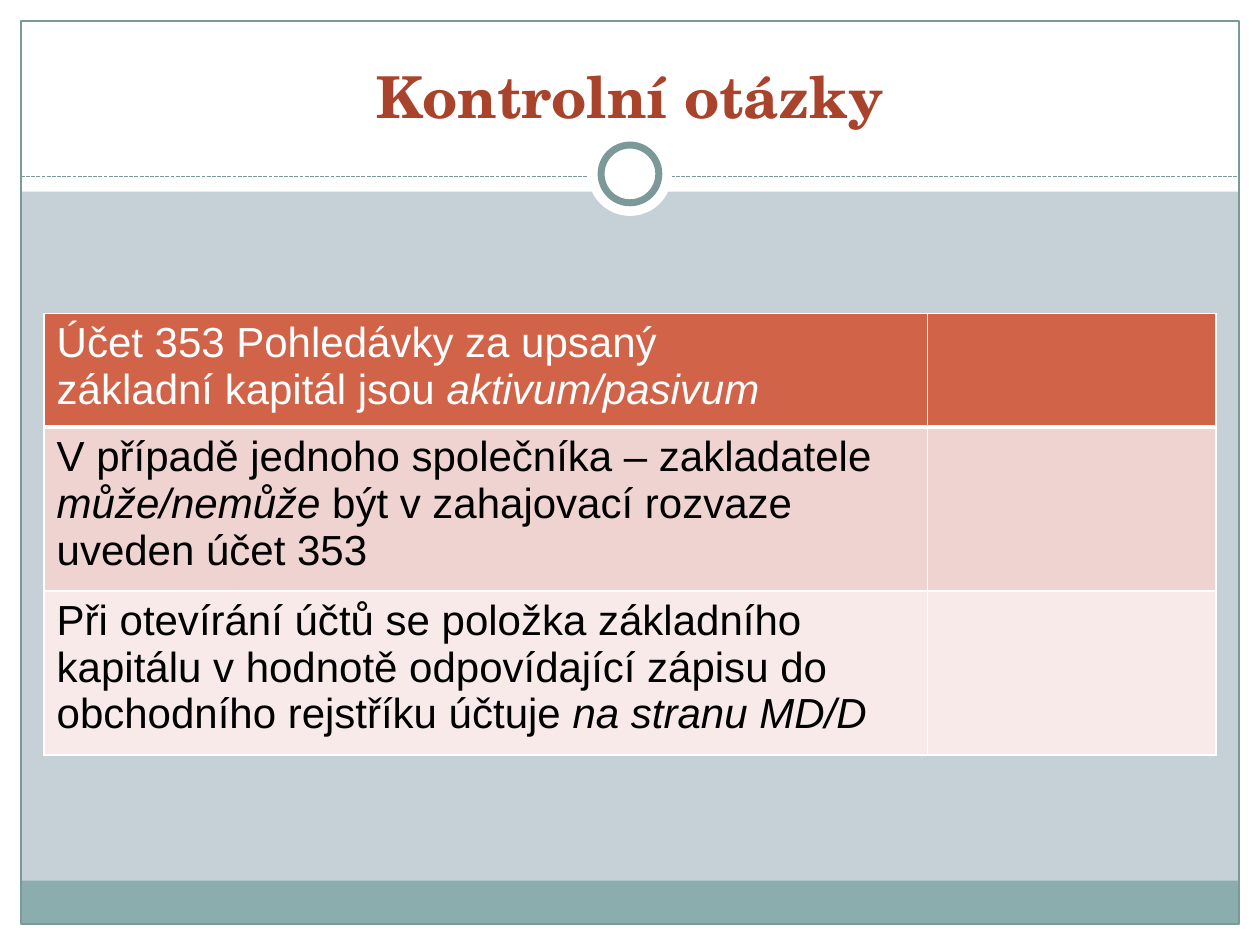
from pptx import Presentation
from pptx.dml.color import RGBColor
from pptx.enum.dml import MSO_LINE
from pptx.enum.shapes import MSO_CONNECTOR, MSO_SHAPE
from pptx.enum.text import MSO_ANCHOR, PP_ALIGN
from pptx.oxml.ns import qn
from pptx.util import Pt
from lxml.etree import SubElement

WHITE = RGBColor(0xFF, 0xFF, 0xFF)
BLACK = RGBColor(0, 0, 0)
BACKGROUND = RGBColor(0xC5, 0xD1, 0xD7)
TEAL = RGBColor(0x8C, 0xAD, 0xAE)
FRAME = RGBColor(0x7C, 0x99, 0x9A)
TITLE = RGBColor(0xA9, 0x43, 0x2B)
HEADER = RGBColor(0xD1, 0x63, 0x49)
ROW_DARK = RGBColor(0xEE, 0xD3, 0xD0)
ROW_LIGHT = RGBColor(0xF7, 0xEA, 0xE9)

WIDTH, HEIGHT, MARGIN = 720, 540, 12
RULE_TOP, RING_CENTER = 100.8, 99.4

ROWS = [
    (60.6, HEADER, WHITE, [
        [("Účet 353 Pohledávky za upsaný", False)],
        [("základní kapitál jsou ", False), ("aktivum/pasivum", True)],
    ]),
    (87.4, ROW_DARK, BLACK, [
        [("V případě jednoho společníka – zakladatele ", False),
         ("může/nemůže", True),
         (" být v zahajovací rozvaze uveden účet 353", False)],
    ]),
    (87.4, ROW_LIGHT, BLACK, [
        [("Při otevírání účtů se položka základního kapitálu v hodnotě "
          "odpovídající zápisu do obchodního rejstříku účtuje ", False),
         ("na stranu MD/D", True)],
    ]),
]


def add_text(paragraph, text, font="Arial", size=24, color=BLACK, bold=False, italic=False):
    run = paragraph.add_run()
    run.text = text
    run.font.name = font
    run.font.size = Pt(size)
    run.font.color.rgb = color
    run.font.bold = bold
    run.font.italic = italic


class SlideBuilder:
    title_font = "TeX Gyre Schola"
    body_font = "Arial"

    def __init__(self, slide):
        self.slide = slide
        slide.background.fill.solid()
        slide.background.fill.fore_color.rgb = BACKGROUND

    def shape(self, kind, left, top, width, height, fill=None, line=None, line_width=0.75):
        shape = self.slide.shapes.add_shape(kind, Pt(left), Pt(top), Pt(width), Pt(height))
        shape.shadow.inherit = False
        if fill is None:
            shape.fill.background()
        else:
            shape.fill.solid()
            shape.fill.fore_color.rgb = fill
        if line is None:
            shape.line.fill.background()
        else:
            shape.line.color.rgb = line
            shape.line.width = Pt(line_width)

    def circle(self, diameter, **style):
        self.shape(MSO_SHAPE.OVAL, (WIDTH - diameter) / 2, RING_CENTER - diameter / 2,
                   diameter, diameter, **style)

    def dashed_rule(self, left, right, top):
        connector = self.slide.shapes.add_connector(
            MSO_CONNECTOR.STRAIGHT, Pt(left), Pt(top), Pt(right), Pt(top))
        connector.line.color.rgb = FRAME
        connector.line.width = Pt(0.75)
        connector.line.dash_style = MSO_LINE.SQUARE_DOT
        SubElement(connector._element.spPr, qn("a:effectLst"))

    def title(self, text, left, top, width, height):
        text_frame = self.slide.shapes.add_textbox(
            Pt(left), Pt(top), Pt(width), Pt(height)).text_frame
        text_frame.word_wrap = True
        text_frame.vertical_anchor = MSO_ANCHOR.BOTTOM
        paragraph = text_frame.paragraphs[0]
        paragraph.alignment = PP_ALIGN.CENTER
        add_text(paragraph, text, font=self.title_font, size=33, color=TITLE, bold=True)

    def borders(self, cell, top, bottom):
        properties = cell._tc.get_or_add_tcPr()
        widths = {"a:lnL": 1, "a:lnR": 1, "a:lnT": top, "a:lnB": bottom}
        for position, (tag, width) in enumerate(widths.items()):
            border = SubElement(properties, qn(tag), w=str(Pt(width)))
            fill = SubElement(border, qn("a:solidFill"))
            SubElement(fill, qn("a:srgbClr"), val=str(WHITE))
            properties.insert(position, border)

    def table(self, left, top, column_widths, rows):
        table = self.slide.shapes.add_table(
            len(rows), len(column_widths), Pt(left), Pt(top),
            Pt(sum(column_widths)), Pt(sum(row[0] for row in rows))).table
        for column, width in zip(table.columns, column_widths):
            column.width = Pt(width)
        for index, (height, fill, color, paragraphs) in enumerate(rows):
            table.rows[index].height = Pt(height)
            for cell in table.rows[index].cells:
                cell.fill.solid()
                cell.fill.fore_color.rgb = fill
                self.borders(cell, 3 if index == 1 else 1, 3 if index == 0 else 1)
            text_frame = table.cell(index, 0).text_frame
            for number, runs in enumerate(paragraphs):
                paragraph = text_frame.add_paragraph() if number else text_frame.paragraphs[0]
                for text, italic in runs:
                    add_text(paragraph, text, font=self.body_font, color=color, italic=italic)


def main():
    presentation = Presentation()
    presentation.slide_width = Pt(WIDTH)
    presentation.slide_height = Pt(HEIGHT)
    builder = SlideBuilder(presentation.slides.add_slide(presentation.slide_layouts[6]))

    inner_width, inner_height = WIDTH - 2 * MARGIN, HEIGHT - 2 * MARGIN
    for band in [
        (0, HEIGHT - MARGIN, WIDTH, MARGIN),
        (0, 0, WIDTH, 109.6),
        (0, 0, MARGIN, HEIGHT),
        (WIDTH - MARGIN, 0, MARGIN, HEIGHT),
    ]:
        builder.shape(MSO_SHAPE.RECTANGLE, *band, fill=WHITE)
    builder.shape(MSO_SHAPE.RECTANGLE, MARGIN, 503.2, inner_width, 24.6, fill=TEAL)
    builder.shape(MSO_SHAPE.RECTANGLE, MARGIN, MARGIN, inner_width, inner_height, line=FRAME)
    builder.dashed_rule(MARGIN, WIDTH - MARGIN, RULE_TOP)
    builder.circle(48, fill=WHITE)
    builder.circle(33, fill=WHITE, line=FRAME, line_width=4)
    builder.title("Kontrolní otázky", 24, 18, 672, 60)
    builder.table(25.2, 179.2, [504.8, 165], ROWS)
    presentation.save("out.pptx")


if __name__ == "__main__":
    main()
